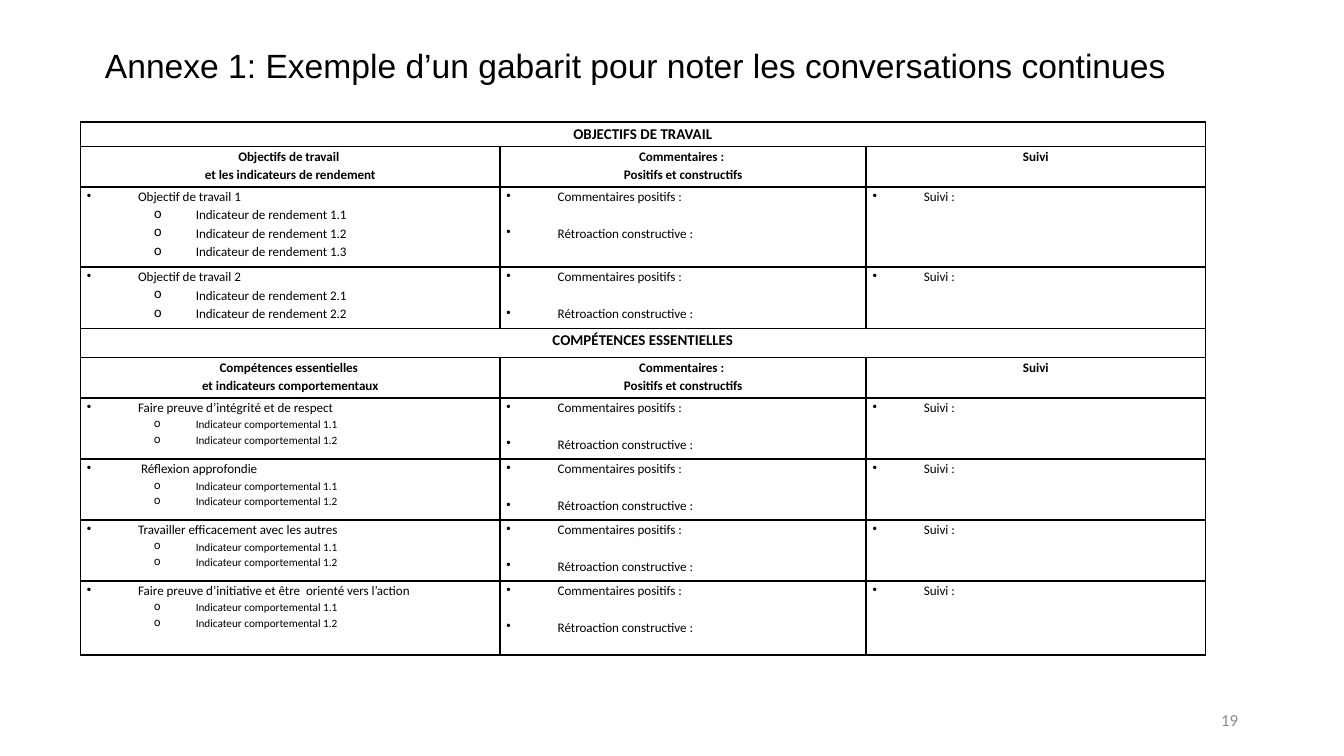
import pptx
import pptx.dml.color
import pptx.enum.text
import pptx.oxml.ns
import pptx.util
from lxml import etree

Cm, Pt = pptx.util.Cm, pptx.util.Pt
ALIGN = pptx.enum.text.PP_ALIGN
MIDDLE = pptx.enum.text.MSO_ANCHOR.MIDDLE

# Content
TITLE = "Annexe 1: Exemple d’un gabarit pour noter les conversations continues"
PAGE_NUMBER = "19"
COMMENT_HEADING = ["Commentaires : ", "Positifs et constructifs"]
COMMENTS = ["Commentaires positifs :", "Rétroaction constructive :"]
FOLLOW_UP = "Suivi"
BEHAVIOURS = [f"Indicateur comportemental 1.{n}" for n in (1, 2)]
SECTIONS = [
    {
        "name": "OBJECTIFS DE TRAVAIL",
        "heading": ["Objectifs de travail ", "et les indicateurs de rendement"],
        "detail_size": "body",
        "items": [
            ("Objectif de travail 1", [f"Indicateur de rendement 1.{n}" for n in (1, 2, 3)]),
            ("Objectif de travail 2", [f"Indicateur de rendement 2.{n}" for n in (1, 2)]),
        ],
    },
    {
        "name": "COMPÉTENCES ESSENTIELLES",
        "heading": ["Compétences essentielles ", "et indicateurs comportementaux"],
        "detail_size": "small",
        "items": [
            ("Faire preuve d’intégrité et de respect", BEHAVIOURS),
            (" Réflexion approfondie", BEHAVIOURS),
            ("Travailler efficacement avec les autres", BEHAVIOURS),
            ("Faire preuve d’initiative et être  orienté vers l’action", BEHAVIOURS),
        ],
    },
]

# Layout in centimetres
PAGE_SIZE = (25.4, 14.29)
TITLE_BOX = (1.73, 0.08, 23.67, 2.39)
NUMBER_BOX = (17.93, 13.23, 5.72, 0.76)
TABLE_ORIGIN = (1.52, 2.31)
COLUMNS = [7.93, 6.92, 6.41]
ROWS = [0.46, 0.76, 1.52, 1.16, 0.55, 0.76, 1.16, 1.15, 1.15, 1.4]
CELL_INSET = 0.12
INDENTS = [(0.97, -0.97), (2.06, -0.79)]
BULLETS = ["•", "o"]

THEME = {
    "ink": "000000", "muted": "8C8C8C",
    "title_font": "Arial", "body_font": "Calibri",
    "title": 18, "number": 9, "section": 8, "body": 7, "small": 6,
    "border": 1, "line_gap": 9.8,
}


def write(frame, text, first=False, size="body", color="ink", font="body_font",
          bold=False, align=ALIGN.LEFT, spacing=1.15, before=0, level=None):
    """Add one paragraph; a level gives it a bullet and an indent."""
    para = frame.paragraphs[0] if first else frame.add_paragraph()
    para.alignment = align
    para.line_spacing = spacing
    para.space_before = Pt(before)
    if level is not None:
        para.level = level
        margin, hanging = INDENTS[level]
        properties = para._p.get_or_add_pPr()
        properties.set("marL", str(Cm(margin)))
        properties.set("indent", str(Cm(hanging)))
        bullet = etree.SubElement(properties, pptx.oxml.ns.qn("a:buChar"))
        bullet.set("char", BULLETS[level])
    span = para.add_run()
    span.text = text
    span.font.name = THEME[font]
    span.font.size = Pt(THEME[size])
    span.font.bold = bold
    span.font.color.rgb = pptx.dml.color.RGBColor.from_string(THEME[color])


def write_headings(cell, lines, size="body"):
    for index, line in enumerate(lines):
        write(cell.text_frame, line, first=index == 0, size=size, bold=True,
              align=ALIGN.CENTER)


def style_cell(cell):
    """Set the insets, black borders on all sides and no fill."""
    cell.margin_left = cell.margin_right = Cm(CELL_INSET)
    cell.margin_top = cell.margin_bottom = 0
    properties = cell._tc.get_or_add_tcPr()
    for side in ("lnL", "lnR", "lnT", "lnB"):
        line = etree.SubElement(properties, pptx.oxml.ns.qn(f"a:{side}"))
        line.set("w", str(Pt(THEME["border"])))
        fill = etree.SubElement(line, pptx.oxml.ns.qn("a:solidFill"))
        etree.SubElement(fill, pptx.oxml.ns.qn("a:srgbClr")).set("val", THEME["ink"])
    cell.fill.background()


def fill_item(cells, item, details, detail_size):
    goal, comments, follow_up = [cell.text_frame for cell in cells]
    write(goal, item, first=True, level=0)
    for detail in details:
        write(goal, detail, size=detail_size, level=1)
    for index, comment in enumerate(COMMENTS):
        write(comments, comment, first=index == 0, level=0,
              before=index * THEME["line_gap"])
    write(follow_up, f"{FOLLOW_UP} :", first=True, level=0)


def add_review_table(page):
    frame = page.shapes.add_table(
        len(ROWS), len(COLUMNS), *map(Cm, TABLE_ORIGIN), Cm(sum(COLUMNS)), Cm(sum(ROWS)))
    table = frame.table
    table.first_row = table.horz_banding = False
    for column, width in zip(table.columns, COLUMNS):
        column.width = Cm(width)
    for row, height in zip(table.rows, ROWS):
        row.height = Cm(height)
    for cell in table.iter_cells():
        style_cell(cell)

    rows = iter(table.rows)
    for section in SECTIONS:
        cells = list(next(rows).cells)
        cells[0].merge(cells[-1])
        write_headings(cells[0], [section["name"]], size="section")
        headings = [section["heading"], COMMENT_HEADING, [FOLLOW_UP]]
        for cell, lines in zip(next(rows).cells, headings):
            write_headings(cell, lines)
        for item, details in section["items"]:
            fill_item(next(rows).cells, item, details, section["detail_size"])


def main():
    deck = pptx.Presentation()
    deck.slide_width, deck.slide_height = map(Cm, PAGE_SIZE)
    page = deck.slides.add_slide(deck.slide_layouts[5])

    title = page.shapes.title
    title.left, title.top, title.width, title.height = map(Cm, TITLE_BOX)
    number = page.shapes.add_textbox(*map(Cm, NUMBER_BOX))
    for box in (title, number):
        box.text_frame.word_wrap = True
        box.text_frame.auto_size = pptx.enum.text.MSO_AUTO_SIZE.NONE
        box.text_frame.vertical_anchor = MIDDLE
    write(title.text_frame, TITLE, first=True, size="title", font="title_font", spacing=0.9)
    write(number.text_frame, PAGE_NUMBER, first=True, size="number", color="muted",
          align=ALIGN.RIGHT, spacing=1)

    add_review_table(page)
    deck.save("out.pptx")


if __name__ == "__main__":
    main()
